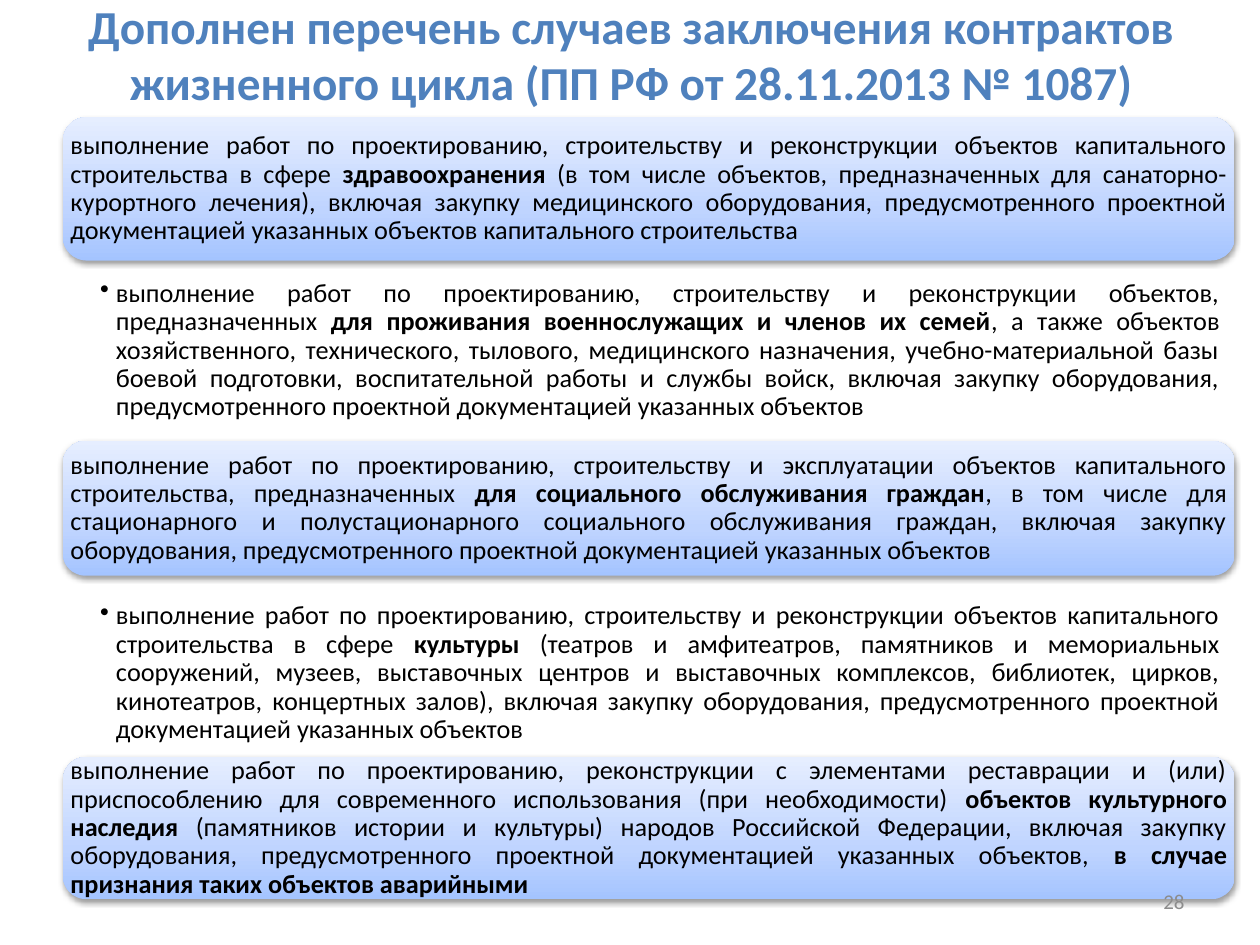
import pptx
import pptx.util
import pptx.dml.color
import pptx.enum.shapes
import pptx.enum.text
import pptx.oxml
import pptx.oxml.ns
from dataclasses import dataclass

Pt = pptx.util.Pt
PP_ALIGN = pptx.enum.text.PP_ALIGN
ANCHOR = pptx.enum.text.MSO_ANCHOR


@dataclass(frozen=True)
class Theme:
    font: str = "Calibri"
    title: str = "4F81BD"
    body: str = "000000"
    number: str = "8C8C8C"
    shadow: str = "000000"
    gradient: tuple = ((0, "A4C4FF"), (35, "BFD4FF"), (100, "E6EEFF"))
    title_size: float = 27
    body_size: float = 15
    number_size: float = 12


THEME = Theme()
LEFT, WIDTH = 36, 669.6
PANEL_INSETS = (4.3, 4.3, 4.3, 4.3)
BULLET_INSETS = (21.3, 1.5, 8.5, 1.5)
BULLET_INDENT = 9

# Kind, top, height and text; ** marks the bold parts
CASES = [
    ("panel", 66.9, 82,
     "выполнение работ по проектированию, строительству и реконструкции объектов "
     "капитального строительства в сфере **здравоохранения** (в том числе объектов, "
     "предназначенных для санаторно-курортного лечения), включая закупку медицинского "
     "оборудования, предусмотренного проектной документацией указанных объектов "
     "капитального строительства"),
    ("bullet", 158.4, 86.4,
     "выполнение работ по проектированию, строительству и реконструкции объектов, "
     "предназначенных **для проживания военнослужащих и членов их семей**, а также "
     "объектов хозяйственного, технического, тылового, медицинского назначения, "
     "учебно-материальной базы боевой подготовки, воспитательной работы и службы войск, "
     "включая закупку оборудования, предусмотренного проектной документацией указанных "
     "объектов"),
    ("panel", 252, 77,
     "выполнение работ по проектированию, строительству и эксплуатации объектов "
     "капитального строительства, предназначенных **для социального обслуживания "
     "граждан**, в том числе для стационарного и полустационарного социального "
     "обслуживания граждан, включая закупку оборудования, предусмотренного проектной "
     "документацией указанных объектов"),
    ("bullet", 342.7, 86.4,
     "выполнение работ по проектированию, строительству и реконструкции объектов "
     "капитального строительства в сфере **культуры** (театров и амфитеатров, "
     "памятников и мемориальных сооружений, музеев, выставочных центров и выставочных "
     "комплексов, библиотек, цирков, кинотеатров, концертных залов), включая закупку "
     "оборудования, предусмотренного проектной документацией указанных объектов"),
    ("panel", 432.5, 81.4,
     "выполнение работ по проектированию, реконструкции с элементами реставрации и (или) "
     "приспособлению для современного использования (при необходимости) **объектов "
     "культурного наследия **(памятников истории и культуры) народов Российской "
     "Федерации, включая закупку оборудования, предусмотренного проектной документацией "
     "указанных объектов, **в случае признания таких объектов аварийными**"),
]


def parse_xml(xml):
    return pptx.oxml.parse_xml(xml.replace(">", f" {pptx.oxml.ns.nsdecls('a')}>", 1))


def add_text(s, box, text, size, color, align, anchor=ANCHOR.MIDDLE,
             insets=(7.2, 3.6, 7.2, 3.6), bold=False):
    """Add a one-paragraph text box and return the paragraph."""
    tf = s.shapes.add_textbox(*map(Pt, box)).text_frame
    tf.word_wrap = True
    tf.vertical_anchor = anchor
    tf.margin_left, tf.margin_top, tf.margin_right, tf.margin_bottom = map(Pt, insets)
    p = tf.paragraphs[0]
    p.alignment = align
    p.font.name, p.font.size = THEME.font, Pt(size)
    p.font.color.rgb = pptx.dml.color.RGBColor.from_string(color)
    for i, part in enumerate(text.split("**")):
        if part:
            r = p.add_run()
            r.text = part
            r.font.bold = bold or i % 2 == 1
    return p


def add_panel(s, box):
    """Add a rounded panel with a vertical gradient and a soft shadow."""
    sp = s.shapes.add_shape(pptx.enum.shapes.MSO_SHAPE.ROUNDED_RECTANGLE, *map(Pt, box))
    sp.line.fill.background()
    sp.shadow.inherit = False
    stops = "".join(f'<a:gs pos="{pos * 1000}"><a:srgbClr val="{color}"/></a:gs>'
                    for pos, color in THEME.gradient)
    sp_pr = sp.element.spPr
    sp_pr.find(pptx.oxml.ns.qn("a:prstGeom")).addnext(parse_xml(
        f'<a:gradFill rotWithShape="1"><a:gsLst>{stops}</a:gsLst>'
        '<a:lin ang="16200000" scaled="0"/></a:gradFill>'))
    sp_pr.find(pptx.oxml.ns.qn("a:effectLst")).append(parse_xml(
        f'<a:outerShdw blurRad="{Pt(3.15)}" dist="{Pt(1.6)}" dir="5400000" rotWithShape="0">'
        f'<a:srgbClr val="{THEME.shadow}"><a:alpha val="38000"/></a:srgbClr></a:outerShdw>'))


def add_bullet(p):
    p.level = 1
    p_pr = p._p.get_or_add_pPr()
    p_pr.set("marL", str(Pt(BULLET_INDENT)))
    p_pr.set("indent", str(-Pt(BULLET_INDENT)))
    bullet = parse_xml('<a:buChar char="•"></a:buChar>')
    p_pr.find(pptx.oxml.ns.qn("a:defRPr")).addprevious(bullet)


def add_case(s, kind, top, height, text):
    box = (LEFT, top, WIDTH, height)
    is_panel = kind == "panel"
    if is_panel:
        add_panel(s, box)
    p = add_text(s, box, text, THEME.body_size, THEME.body, PP_ALIGN.JUSTIFY,
                 ANCHOR.MIDDLE if is_panel else ANCHOR.TOP,
                 PANEL_INSETS if is_panel else BULLET_INSETS)
    p.line_spacing = 0.9
    if not is_panel:
        add_bullet(p)


def main():
    prs = pptx.Presentation()
    prs.slide_width, prs.slide_height = Pt(720), Pt(540)
    s = prs.slides.add_slide(prs.slide_layouts[6])

    # Title
    add_text(s, (36.7, 0, 648, 61.2),
             "Дополнен перечень случаев заключения контрактов жизненного цикла "
             "(ПП РФ от 28.11.2013 № 1087)",
             THEME.title_size, THEME.title, PP_ALIGN.CENTER, bold=True)

    # Contract cases
    for case in CASES:
        add_case(s, *case)

    # Slide number
    add_text(s, (516, 500.5, 168, 28.75), "28",
             THEME.number_size, THEME.number, PP_ALIGN.RIGHT)

    prs.save("out.pptx")


if __name__ == "__main__":
    main()
